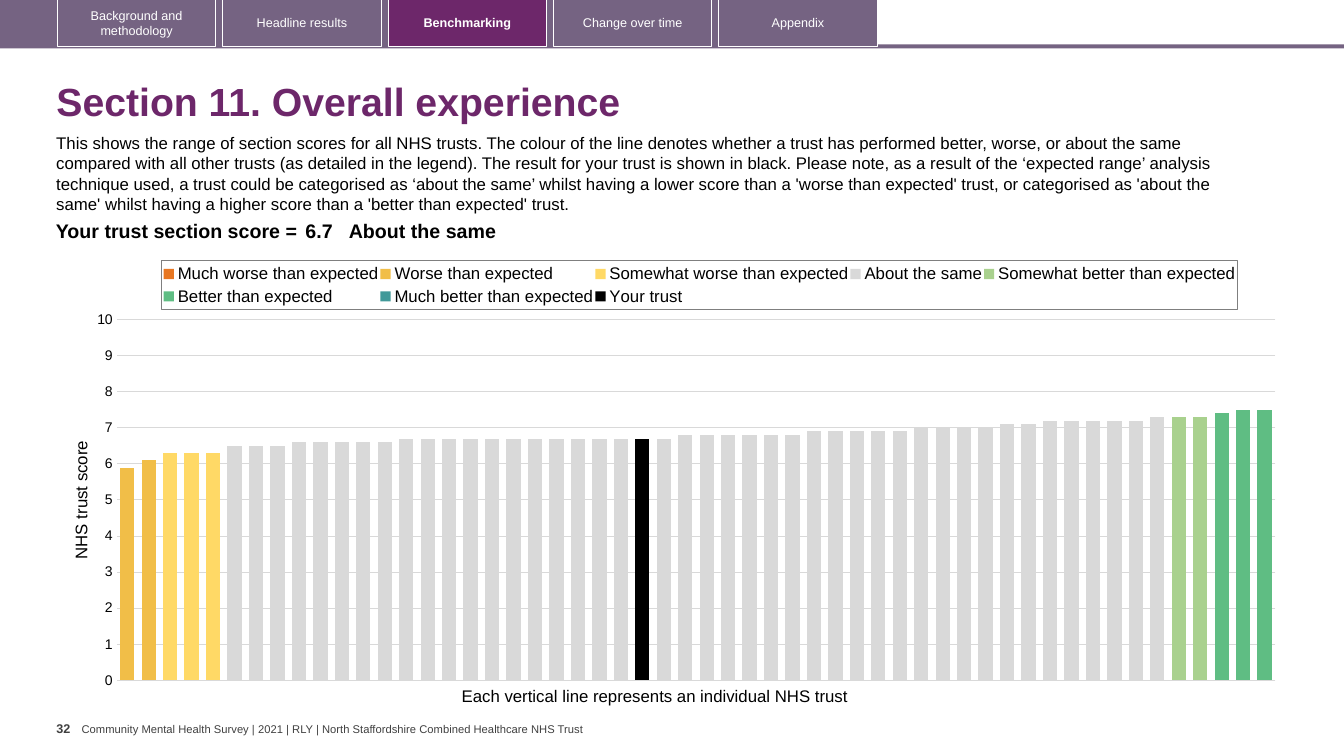
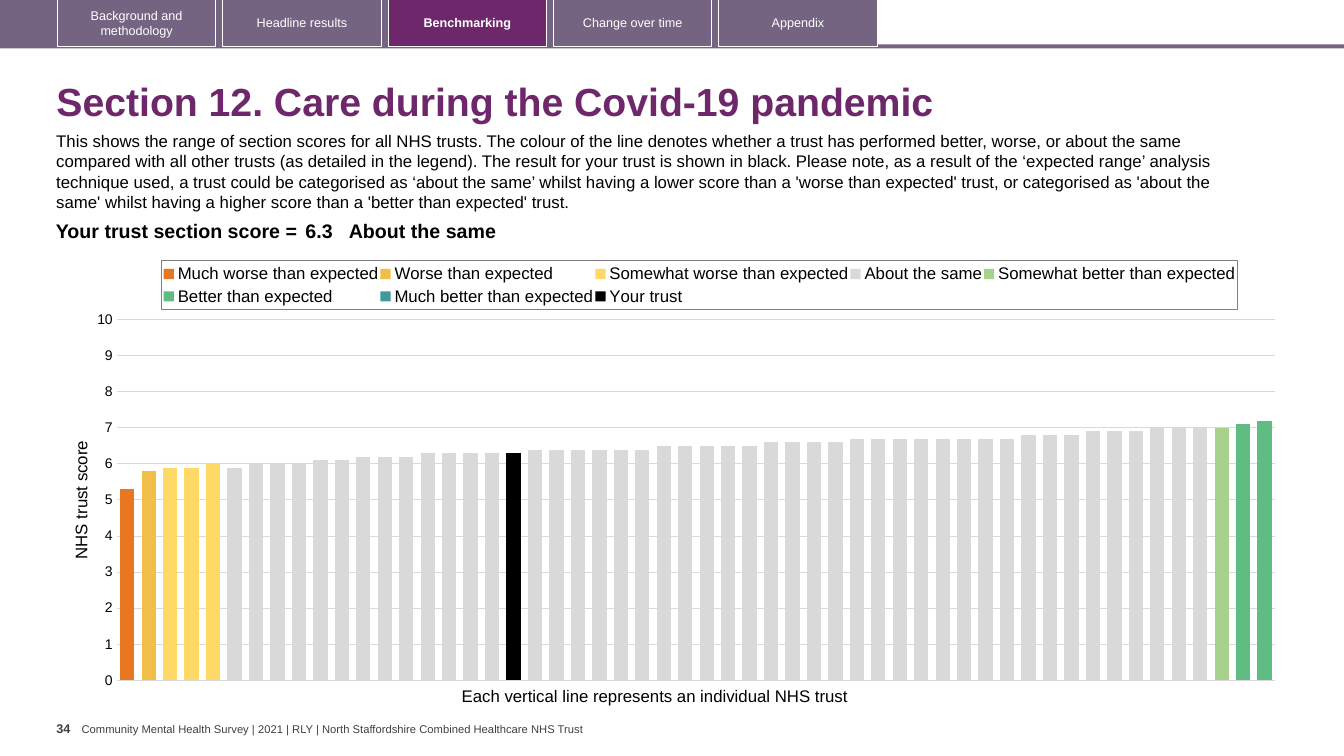
from copy import deepcopy

from pptx import Presentation
from pptx.chart.data import CategoryChartData
from pptx.dml.color import RGBColor
from pptx.enum.chart import XL_CHART_TYPE, XL_LEGEND_POSITION, XL_TICK_MARK
from pptx.enum.shapes import MSO_SHAPE
from pptx.enum.text import MSO_ANCHOR, MSO_AUTO_SIZE, PP_ALIGN
from pptx.oxml import parse_xml
from pptx.oxml.ns import nsdecls
from pptx.util import Inches, Pt

COLUMNS = XL_CHART_TYPE.COLUMN_CLUSTERED
LEGEND_TOP = XL_LEGEND_POSITION.TOP
NO_TICK = XL_TICK_MARK.NONE
RECTANGLE = MSO_SHAPE.RECTANGLE
TOP, MIDDLE = MSO_ANCHOR.TOP, MSO_ANCHOR.MIDDLE
NO_FIT = MSO_AUTO_SIZE.NONE
LEFT, CENTER, RIGHT = PP_ALIGN.LEFT, PP_ALIGN.CENTER, PP_ALIGN.RIGHT

FONT = "Arial"
PURPLE, MAUVE, WHITE, BLACK = "6D276A", "756382", "FFFFFF", "000000"
DARK_GREY, GRID_GREY, BORDER_GREY = "404040", "D9D9D9", "7F7F7F"

TABS = ["Background and methodology", "Headline results", "Benchmarking",
        "Change over time", "Appendix"]
ACTIVE_TAB = "Benchmarking"
FOOTER = ("Community Mental Health Survey | 2021 | RLY | "
          "North Staffordshire Combined Healthcare NHS Trust")
INTRO = (
    "This shows the range of section scores for all NHS trusts. The colour of the line "
    "denotes whether a trust has performed better, worse, or about the same compared with "
    "all other trusts (as detailed in the legend). The result for your trust is shown in "
    "black. Please note, as a result of the ‘expected range’ analysis technique used, a "
    "trust could be categorised as ‘about the same’ whilst having a lower score than a "
    "'worse than expected' trust, or categorised as 'about the same' whilst having a higher "
    "score than a 'better than expected' trust.")

TRUST_COUNT = 54
RATING_COLOURS = {
    "Much worse than expected": "E87722",
    "Worse than expected": "F1BE48",
    "Somewhat worse than expected": "FFD966",
    "About the same": "D9D9D9",
    "Somewhat better than expected": "A9D18E",
    "Better than expected": "5FBD83",
    "Much better than expected": "419999",
    "Your trust": BLACK,
}

# Each rating holds the position of its first trust and the scores from there on.
SECTIONS = [
    {
        "title": "Section 11. Overall experience",
        "number": "32", "score": "6.7", "rating": "About the same", "intro_top": 1.27,
        "ratings": {
            "Worse than expected": (1, [5.9, 6.1]),
            "Somewhat worse than expected": (3, [6.3] * 3),
            "About the same": (6, [6.5] * 3 + [6.6] * 5 + [6.7] * 13 + [6.8] * 6 + [6.9] * 5
                               + [7] * 4 + [7.1] * 2 + [7.2] * 5 + [7.3]),
            "Somewhat better than expected": (50, [7.3] * 2),
            "Better than expected": (52, [7.4, 7.5, 7.5]),
            "Your trust": (25, [6.7]),
        },
    },
    {
        "title": "Section 12. Care during the Covid-19 pandemic",
        "number": "34", "score": "6.3", "rating": "About the same", "intro_top": 1.25,
        "ratings": {
            "Much worse than expected": (1, [5.3]),
            "Worse than expected": (2, [5.8]),
            "Somewhat worse than expected": (3, [5.9, 5.9, 6]),
            "About the same": (6, [5.9] + [6] * 3 + [6.1] * 2 + [6.2] * 3 + [6.3] * 5
                               + [6.4] * 6 + [6.5] * 5 + [6.6] * 4 + [6.7] * 8 + [6.8] * 3
                               + [6.9] * 3 + [7] * 3),
            "Somewhat better than expected": (52, [7]),
            "Better than expected": (53, [7.1, 7.2]),
            "Your trust": (19, [6.3]),
        },
    },
]


def rgb(colour):
    return RGBColor.from_string(colour)


def inches(box):
    return [Inches(length) for length in box]


def set_font(font, size, colour=BLACK, bold=False):
    for name, value in {"name": FONT, "size": Pt(size), "bold": bold}.items():
        setattr(font, name, value)
    font.color.rgb = rgb(colour)


def write(frame, text, size, colour=BLACK, bold=False, align=LEFT):
    para = frame.paragraphs[0]
    para.alignment = align
    span = para.add_run()
    span.text = text
    set_font(span.font, size, colour, bold)
    return para


def set_margins(target, side, vertical):
    for edge, margin in {"left": side, "right": side,
                         "top": vertical, "bottom": vertical}.items():
        setattr(target, f"margin_{edge}", Inches(margin))


def add_text(page, box, text, size, colour=BLACK, bold=False, margins=(0.1, 0.05), anchor=TOP):
    shape = page.shapes.add_textbox(*inches(box))
    frame = shape.text_frame
    frame.word_wrap = True
    frame.vertical_anchor = anchor
    set_margins(frame, *margins)
    write(frame, text, size, colour, bold)
    return shape


def add_rectangle(page, box, fill=None, line=None):
    shape = page.shapes.add_shape(RECTANGLE, *inches(box))
    shape.shadow.inherit = False
    if fill:
        shape.fill.solid()
        shape.fill.fore_color.rgb = rgb(fill)
    else:
        shape.fill.background()
    if line:
        shape.line.color.rgb = rgb(line)
        shape.line.width = Pt(0.75)
    else:
        shape.line.fill.background()
    return shape


def add_navigation(page, box):
    """Draw the tab band across the top and return its shapes."""
    left, top, width, height = box
    tab_width, gap, indent = 1.57, 0.07, 0.57
    shapes = [add_rectangle(page, (left, top + 0.44, width, 0.04), MAUVE),
              add_rectangle(page, (left, top, 8.7, height), MAUVE)]
    for index, label in enumerate(TABS):
        active = label == ACTIVE_TAB
        tab_left = left + indent + index * (tab_width + gap)
        tab = add_rectangle(page, (tab_left, top - 0.01, tab_width, height),
                            PURPLE if active else None, WHITE)
        tab.text_frame.vertical_anchor = MIDDLE
        write(tab.text_frame, label, 9, WHITE, active, CENTER)
        shapes.append(tab)
    return shapes


def prepare_layout(layout):
    """Keep only the title placeholder and give it its place."""
    for holder in list(layout.placeholders):
        if holder.placeholder_format.idx:
            layout.shapes.element.remove(holder.element)
    title = layout.placeholders[0]
    title.left, title.top, title.width, title.height = inches((0.46, 0.67, 12.49, 0.72))


def share_furniture(page, layout):
    """Put the tab band and footer on the layout, where every page shows them."""
    shapes = add_navigation(page, (0, 0, 13.33, 0.47))
    shapes.append(add_text(page, (0.81, 7.17, 6, 0.13), FOOTER, 8, DARK_GREY,
                           margins=(0, 0), anchor=MIDDLE))
    for shape in shapes:
        layout.shapes.element.append(shape.element)


def add_title(page, text):
    frame = page.shapes.title.text_frame
    frame.auto_size = NO_FIT
    frame.vertical_anchor = MIDDLE
    para = write(frame, text, 28, PURPLE, True)
    para.line_spacing = 0.9


def add_score_table(page, box, score, rating):
    table = page.shapes.add_table(1, 3, *inches(box)).table
    table.first_row = table.horz_banding = False
    cells = [("Your trust section score =", 2.63, RIGHT, 0.04),
             (score, 0.47, LEFT, 0.04),
             (rating, 8.6, LEFT, 0)]
    for index, (text, width, align, side) in enumerate(cells):
        table.columns[index].width = Inches(width)
        cell = table.cell(0, index)
        cell.fill.background()
        set_margins(cell, side, 0.04)
        write(cell.text_frame, text, 14, bold=True, align=align)


def set_layout(parent, position, target, **fractions):
    """Fix the place of a chart part, in fractions of the chart."""
    for old in parent.xpath("c:layout"):
        parent.remove(old)
    modes = "".join(f'<c:{axis}Mode val="edge"/>' for axis in "xy")
    lengths = "".join(f'<c:{name} val="{value}"/>' for name, value in fractions.items())
    parent.insert(position, parse_xml(
        f'<c:layout {nsdecls("c")}><c:manualLayout>{target}{modes}{lengths}'
        '</c:manualLayout></c:layout>'))


def format_legend(chart):
    chart.has_legend = True
    chart.legend.position = LEGEND_TOP
    chart.legend.include_in_layout = False
    set_font(chart.legend.font, 12)
    legend = chart.element.xpath(".//c:legend")[0]
    set_layout(legend, 1, "", x=0.077, y=0.026, w=0.878, h=0.11)
    legend.xpath("c:overlay")[0].addnext(parse_xml(
        f'<c:spPr {nsdecls("c", "a")}><a:ln w="9525"><a:solidFill>'
        f'<a:srgbClr val="{BORDER_GREY}"/></a:solidFill></a:ln></c:spPr>'))


def format_axes(chart):
    chart.category_axis.visible = False
    axis = chart.value_axis
    for name, value in {"minimum_scale": 0, "maximum_scale": 10, "major_unit": 1,
                        "major_tick_mark": NO_TICK, "minor_tick_mark": NO_TICK}.items():
        setattr(axis, name, value)
    set_font(axis.tick_labels.font, 10)
    axis.format.line.fill.background()
    grid = axis.major_gridlines.format.line
    grid.color.rgb = rgb(GRID_GREY)
    grid.width = Pt(0.75)
    write(axis.axis_title.text_frame, "NHS trust score", 12, align=CENTER)


def move_last_series_to_right_axis(chart):
    area = chart.element.xpath(".//c:plotArea")[0]
    columns, categories, values = [area.xpath(f"c:{tag}")[0]
                                   for tag in ("barChart", "catAx", "valAx")]
    right_columns, right_categories, right_values = map(deepcopy, (columns, categories, values))
    columns.remove(columns.xpath("c:ser")[-1])
    for series in right_columns.xpath("c:ser")[:-1]:
        right_columns.remove(series)
    for part in right_values.xpath("c:majorGridlines | c:title"):
        right_values.remove(part)
    settings = [(right_categories, "axId", "5001"), (right_categories, "crossAx", "5002"),
                (right_values, "axId", "5002"), (right_values, "crossAx", "5001"),
                (right_values, "axPos", "r"), (right_values, "tickLblPos", "none"),
                (right_values, "crosses", "max")]
    for axis, tag, value in settings:
        axis.xpath(f"c:{tag}")[0].set("val", value)
    for reference, value in zip(right_columns.xpath("c:axId"), ("5001", "5002")):
        reference.set("val", value)
    columns.addnext(right_columns)
    values.addnext(right_values)
    right_values.addnext(right_categories)


def add_score_chart(page, box, ratings):
    data = CategoryChartData()
    data.categories = [str(number) for number in range(1, TRUST_COUNT + 1)]
    for name in RATING_COLOURS:
        first, scores = ratings.get(name, (1, []))
        values = [None] * (first - 1) + scores
        data.add_series(name, values + [None] * (TRUST_COUNT - len(values)))
    chart = page.shapes.add_chart(COLUMNS, *inches(box), data).chart
    set_font(chart.font, 10)
    chart.has_title = False
    plot = chart.plots[0]
    for name, value in {"gap_width": 50, "overlap": 100, "vary_by_categories": False}.items():
        setattr(plot, name, value)
    for series in plot.series:
        series.format.fill.solid()
        series.format.fill.fore_color.rgb = rgb(RATING_COLOURS[series.name])
    format_axes(chart)
    format_legend(chart)
    move_last_series_to_right_axis(chart)
    set_layout(chart.element.xpath(".//c:plotArea")[0], 0, '<c:layoutTarget val="inner"/>',
               x=0.04, y=0.158, w=0.946, h=0.806)


def add_section_page(deck, layout, section):
    page = deck.slides.add_slide(layout)
    add_title(page, section["title"])
    add_text(page, (0.56, 7.1, 0.25, 0.4), section["number"], 9, DARK_GREY, True, (0, 0.05))
    add_text(page, (0.46, section["intro_top"], 12.13, 0.91), INTRO, 12)
    add_text(page, (4.48, 6.75, 4.11, 0.3),
             "Each vertical line represents an individual NHS trust", 12)
    add_score_chart(page, (0.67, 2.47, 12.15, 4.44), section["ratings"])
    add_score_table(page, (0.36, 2.15, 11.7, 0.31), section["score"], section["rating"])
    return page


def main():
    deck = Presentation()
    deck.slide_width, deck.slide_height = Inches(13.33), Inches(7.5)
    layout = deck.slide_layouts.get_by_name("Title Only")
    prepare_layout(layout)
    pages = [add_section_page(deck, layout, section) for section in SECTIONS]
    share_furniture(pages[0], layout)
    deck.save("out.pptx")


if __name__ == "__main__":
    main()
